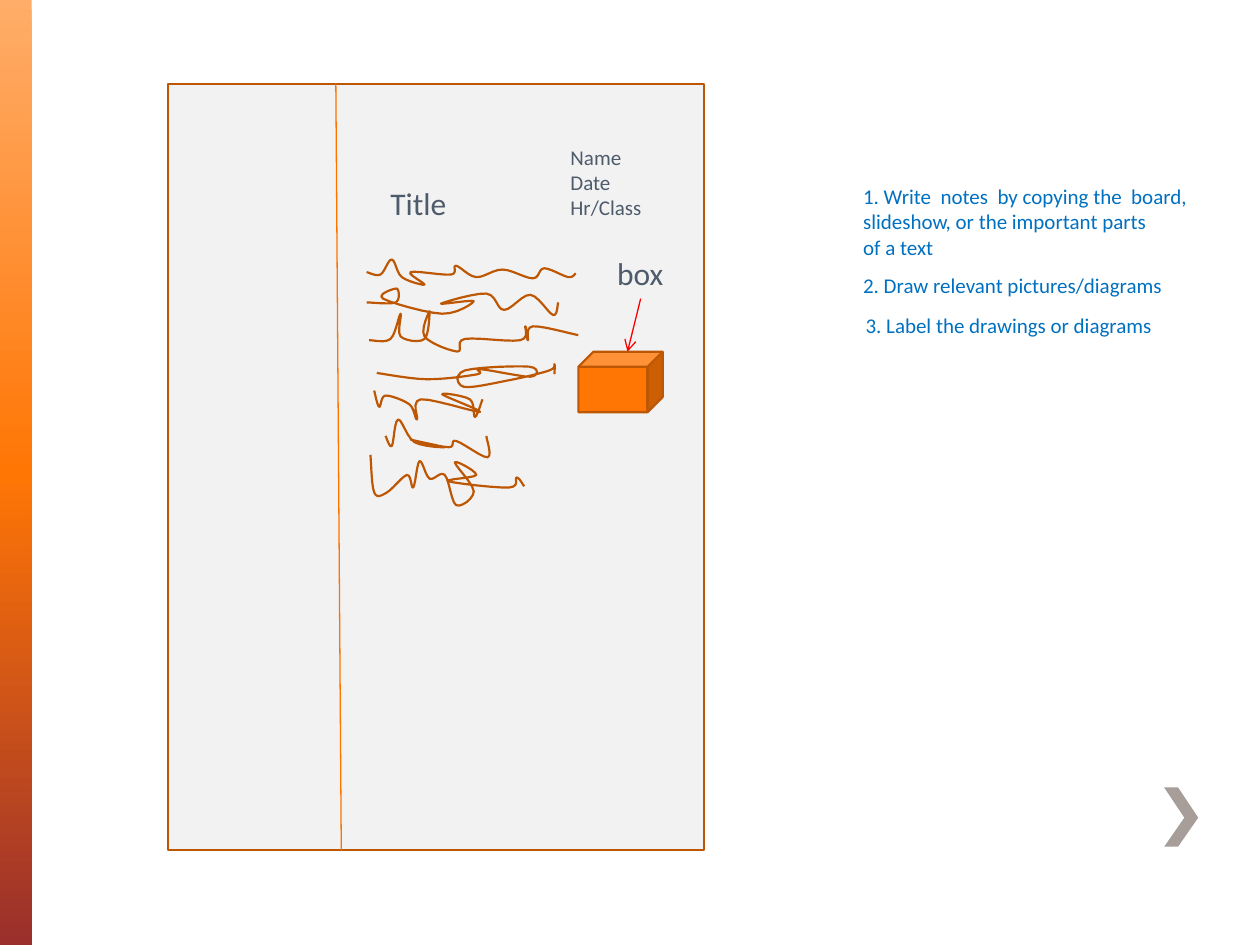
from copy import deepcopy

from lxml import etree
from pptx import Presentation
from pptx.dml.color import RGBColor
from pptx.enum.shapes import MSO_CONNECTOR as Link, MSO_SHAPE as Preset
from pptx.enum.text import MSO_AUTO_SIZE as AutoSize
from pptx.oxml.ns import qn
from pptx.util import Cm, Pt

BLUE = "0070C0"
SLATE = "4D5B6B"
ORANGE = "FF7605"
RUST = "BD5704"
UNIT = Cm(0.0254)
STEPS = 6

CHEVRON = [(935, 625), (924, 625), (940, 649), (924, 672), (935, 672), (951, 649)]

SCRIBBLES = [
    [(291, 216), (302, 218), (311, 206), (319, 220), (337, 226), (326, 216),
     (358, 218), (362, 211), (378, 220), (399, 214), (423, 221), (432, 213),
     (451, 220), (457, 217)],
    [(291, 240), (314, 240), (315, 229), (304, 237), (351, 249), (376, 239),
     (350, 241), (386, 233), (400, 246), (421, 234), (439, 250), (443, 240)],
    [(293, 270), (310, 269), (318, 249), (318, 267), (337, 269), (341, 247),
     (337, 267), (363, 279), (369, 269), (413, 270), (417, 259), (419, 270),
     (423, 259), (459, 266)],
    [(299, 296), (339, 301), (379, 297), (381, 293), (421, 299), (420, 291),
     (369, 294), (368, 307), (403, 302), (436, 294), (440, 289), (440, 297)],
    [(297, 310), (301, 323), (306, 314), (325, 321), (331, 333), (334, 317),
     (381, 327), (351, 313), (373, 317), (377, 331), (383, 317)],
    [(306, 346), (311, 354), (316, 333), (329, 351), (353, 355), (326, 349),
     (356, 355), (362, 350), (387, 363), (386, 346)],
    [(294, 361), (297, 391), (307, 391), (323, 377), (328, 387), (333, 366),
     (341, 380), (353, 377), (362, 401), (376, 390), (361, 367), (378, 377),
     (356, 382), (404, 387), (410, 379), (416, 386)],
]


def color(code):
    return RGBColor.from_string(code)


def smooth(anchors):
    padded = [anchors[0], *anchors, anchors[-1]]
    curve = [anchors[0]]
    for before, start, end, after in zip(padded, padded[1:], padded[2:], padded[3:]):
        for step in range(1, STEPS + 1):
            t = step / STEPS
            curve.append(tuple(
                b + t / 2 * (c - a + t * (2 * a - 5 * b + 4 * c - d
                                          + t * (3 * b - 3 * c + d - a)))
                for a, b, c, d in zip(before, start, end, after)))
    return curve


def write(box, text, size=12, ink=SLATE, font="Calibri"):
    frame = box.text_frame
    for index, line in enumerate(text.split("\n")):
        para = frame.add_paragraph() if index else frame.paragraphs[0]
        span = para.add_run()
        span.text = line
        span.font.name = font
        span.font.size = Pt(size)
        span.font.color.rgb = color(ink)


class Sketch:
    def __init__(self, page, outline=RUST, weight=1.25):
        self.page = page
        self.outline = outline
        self.weight = weight

    def paint(self, shape, fill, outlined):
        shape.shadow.inherit = False
        if fill:
            shape.fill.solid()
            shape.fill.fore_color.rgb = color(fill)
        else:
            shape.fill.background()
        if outlined:
            shape.line.color.rgb = color(self.outline)
            shape.line.width = Pt(self.weight)
        else:
            shape.line.fill.background()
        return shape

    def shape(self, preset, area, fill, outlined=True):
        shape = self.page.shapes.add_shape(preset, *map(Cm, area))
        return self.paint(shape, fill, outlined)

    def gradient_bar(self, area, stops):
        bar = self.shape(Preset.RECTANGLE, area, None, outlined=False)
        bar.fill.gradient()
        bar.fill.gradient_angle = 270
        stop_list = bar._element.spPr.find(".//" + qn("a:gsLst"))
        while len(stop_list) < len(stops):
            stop_list.append(deepcopy(stop_list[0]))
        for stop, (position, code) in zip(bar.fill.gradient_stops, stops):
            stop.position = position
            stop.color.rgb = color(code)

    def outline_shape(self, points, fill=None):
        start, *rest = [(x * UNIT, y * UNIT) for x, y in points]
        builder = self.page.shapes.build_freeform(*start)
        builder.add_line_segments(rest, close=bool(fill))
        return self.paint(builder.convert_to_shape(), fill, outlined=not fill)

    def line(self, start, end, ink, arrow=False):
        line = self.page.shapes.add_connector(
            Link.STRAIGHT, *map(Cm, (*start, *end)))
        line.line.color.rgb = color(ink)
        line.line.width = Pt(0.75)
        if arrow:
            etree.SubElement(line.line._get_or_add_ln(), qn("a:tailEnd"), type="arrow")
        etree.SubElement(line._element.spPr, qn("a:effectLst"))
        return line

    def text(self, area, text, wrap=False, **style):
        box = self.page.shapes.add_textbox(*map(Cm, area))
        box.text_frame.word_wrap = wrap
        box.text_frame.auto_size = AutoSize.SHAPE_TO_FIT_TEXT
        write(box, text, **style)
        return box


def main():
    deck = Presentation()
    deck.slide_width, deck.slide_height = Cm(25.4), Cm(19.05)
    sketch = Sketch(deck.slides.add_slide(deck.slide_layouts[6]))

    sketch.gradient_bar((0, 0, 0.64, 19.05),
                        [(0, "FFAD69"), (0.5, ORANGE), (1, "9A2F2C")])
    sketch.outline_shape(CHEVRON, fill="A79D99")
    sketch.shape(Preset.RECTANGLE, (3.39, 1.69, 10.8, 15.45), "F2F2F2")
    sketch.line((6.77, 1.69), (6.88, 17.14), "FE7300")

    sketch.text((17.15, 3.58, 7.62, 1.8),
                "1. Write  notes  by copying the  board,\n"
                "slideshow, or the important parts\nof a text",
                wrap=True, ink=BLUE)
    sketch.text((17.15, 5.36, 6.6, 0.76), "2. Draw relevant pictures/diagrams", ink=BLUE)
    sketch.text((17.2, 6.17, 6.35, 0.76), "3. Label the drawings or diagrams", ink=BLUE)
    sketch.text((7.62, 3.58, 1.9, 1.8), "Title", wrap=True, size=18)
    sketch.text((11.25, 2.79, 1.96, 2.57), "Name\nDate\nHr/Class")

    for scribble in SCRIBBLES:
        sketch.outline_shape(smooth(scribble))

    sketch.shape(Preset.CUBE, (11.66, 7.09, 1.7, 1.22), ORANGE)
    label = sketch.text((12.19, 5, 1.45, 1.02), "box", size=18)
    arrow = sketch.line((12.92, 6.02), (12.65, 7.09), "FF0000", arrow=True)
    arrow.begin_connect(label, 2)

    deck.save("out.pptx")


if __name__ == "__main__":
    main()
